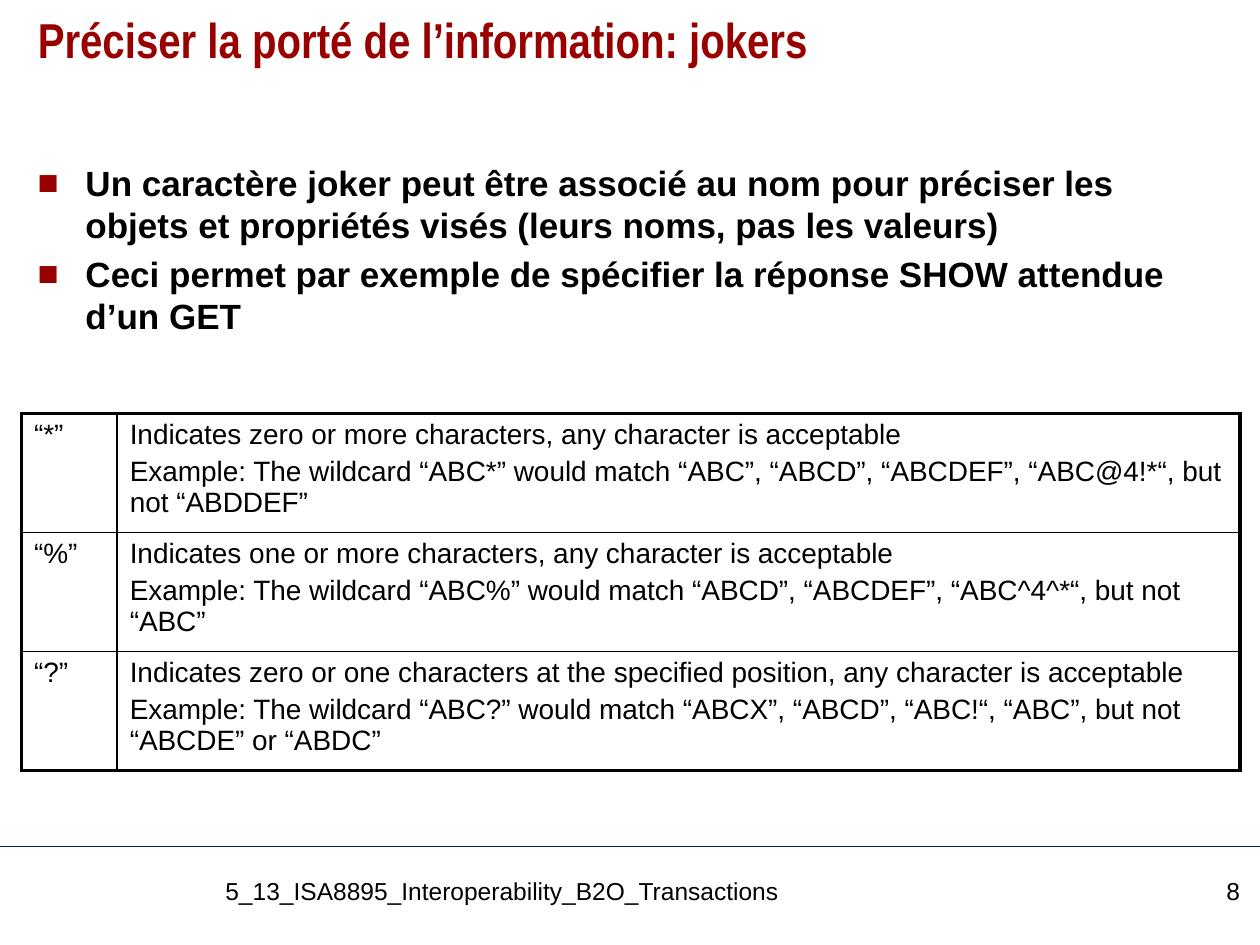
from lxml import etree
from pptx import Presentation
from pptx.dml.color import RGBColor
from pptx.enum.shapes import MSO_CONNECTOR
from pptx.enum.text import MSO_ANCHOR, PP_ALIGN
from pptx.oxml.ns import qn
from pptx.util import Inches, Pt

LEFT, RIGHT = PP_ALIGN.LEFT, PP_ALIGN.RIGHT
TOP = MSO_ANCHOR.TOP
STRAIGHT = MSO_CONNECTOR.STRAIGHT
TITLE_ONLY = 5

COLORS = {"title": "990000", "text": "010000", "footer": "000000", "rule": "002060", "border": "000000"}
FORMATS = {
    "title": {"name": "Arial Narrow", "size": Pt(28), "bold": True},
    "body": {"name": "Arial", "size": Pt(20), "bold": True},
    "cell": {"name": "Arial", "size": Pt(16), "bold": False},
    "footer": {"name": "Arial", "size": Pt(14), "bold": False},
}
TITLE = "Préciser la porté de l’information: jokers"
POINTS = [
    "Un caractère joker peut être associé au nom pour préciser les objets et propriétés visés (leurs noms, pas les valeurs)",
    "Ceci permet par exemple de spécifier la réponse SHOW attendue d’un GET",
]
WILDCARDS = [
    ("“*”", "Indicates zero or more characters, any character is acceptable",
     "Example: The wildcard “ABC*” would match “ABC”, “ABCD”, “ABCDEF”, “ABC@4!*“, but not “ABDDEF”"),
    ("“%”", "Indicates one or more characters, any character is acceptable",
     "Example: The wildcard “ABC%” would match “ABCD”, “ABCDEF”, “ABC^4^*“, but not “ABC”"),
    ("“?”", "Indicates zero or one characters at the specified position, any character is acceptable",
     "Example: The wildcard “ABC?” would match “ABCX”, “ABCD”, “ABC!“, “ABC”, but not “ABCDE” or “ABDC”"),
]


def style(font, kind, color):
    for key, value in FORMATS[kind].items():
        setattr(font, key, value)
    font.color.rgb = RGBColor.from_string(COLORS[color])


def write(frame, texts, kind, color, gap=0, align=LEFT, bullet=False):
    frame.word_wrap = True
    frame.vertical_anchor = TOP
    for index, text in enumerate(texts):
        para = frame.paragraphs[0] if index == 0 else frame.add_paragraph()
        para.alignment = align
        para.space_before = Pt(gap if index else 0)
        if bullet:
            add_bullet(para)
        span = para.add_run()
        span.text = text
        style(span.font, kind, color)


def add_bullet(para):
    props = para._p.get_or_add_pPr()
    props.set("marL", str(Inches(0.38)))
    props.set("indent", str(-Inches(0.38)))
    tint = etree.SubElement(props, qn("a:buClr"))
    etree.SubElement(tint, qn("a:srgbClr"), val=COLORS["title"])
    etree.SubElement(props, qn("a:buFont"), typeface="Arial")
    etree.SubElement(props, qn("a:buChar"), char="■")


def add_title(page, box):
    title = page.shapes.title
    title.left, title.top, title.width, title.height = map(Inches, box)
    write(title.text_frame, [TITLE], "title", "title")
    title.text_frame.paragraphs[0].line_spacing = 0.9


def add_text(page, box, texts, kind, color, **layout):
    shape = page.shapes.add_textbox(*map(Inches, box))
    write(shape.text_frame, texts, kind, color, **layout)


def set_borders(cell, widths):
    props = cell._tc.get_or_add_tcPr()
    for index, (side, width) in enumerate(widths.items()):
        line = etree.Element(qn(f"a:{side}"), w=str(Pt(width)))
        fill = etree.SubElement(line, qn("a:solidFill"))
        etree.SubElement(fill, qn("a:srgbClr"), val=COLORS["border"])
        props.insert(index, line)


def add_wildcards(page, box):
    last = len(WILDCARDS) - 1
    table = page.shapes.add_table(len(WILDCARDS), 2, *map(Inches, box)).table
    table.first_row = table.horz_banding = False
    for column, width in zip(table.columns, (0.76, 8.91)):
        column.width = Inches(width)
    for row, (symbol, *meaning) in enumerate(WILDCARDS):
        for col, texts in enumerate(([symbol], meaning)):
            cell = table.cell(row, col)
            cell.fill.background()
            write(cell.text_frame, texts, "cell", "text", gap=3.2)
            outer = {"lnL": col == 0, "lnR": col == 1, "lnT": row == 0, "lnB": row == last}
            set_borders(cell, {side: 2.25 if edge else 1 for side, edge in outer.items()})


def add_footer(page, box):
    left, top, width, height = box
    rule = page.shapes.add_connector(STRAIGHT, *map(Inches, (left, top, left + width, top)))
    rule.line.color.rgb = RGBColor.from_string(COLORS["rule"])
    rule.line.width = Pt(0.75)
    etree.SubElement(rule._element.spPr, qn("a:effectLst"))
    text_top = top + 0.18
    add_text(page, (left + 1.69, text_top, 7.21, 0.45),
             ["5_13_ISA8895_Interoperability_B2O_Transactions"], "footer", "footer")
    add_text(page, (left + 9.02, text_top, 0.92, 0.45), ["8"], "footer", "footer", align=RIGHT)


def main():
    deck = Presentation()
    deck.slide_width, deck.slide_height = Inches(10), Inches(7.5)
    page = deck.slides.add_slide(deck.slide_layouts[TITLE_ONLY])
    add_title(page, (0.2, 0.08, 9.61, 0.83))
    add_text(page, (0.2, 1.23, 9.61, 5.35), POINTS, "body", "text", gap=4, bullet=True)
    add_wildcards(page, (0.17, 3.28, 9.67, 2.67))
    add_footer(page, (0, 6.72, 10, 0.78))
    deck.save("out.pptx")


if __name__ == "__main__":
    main()
